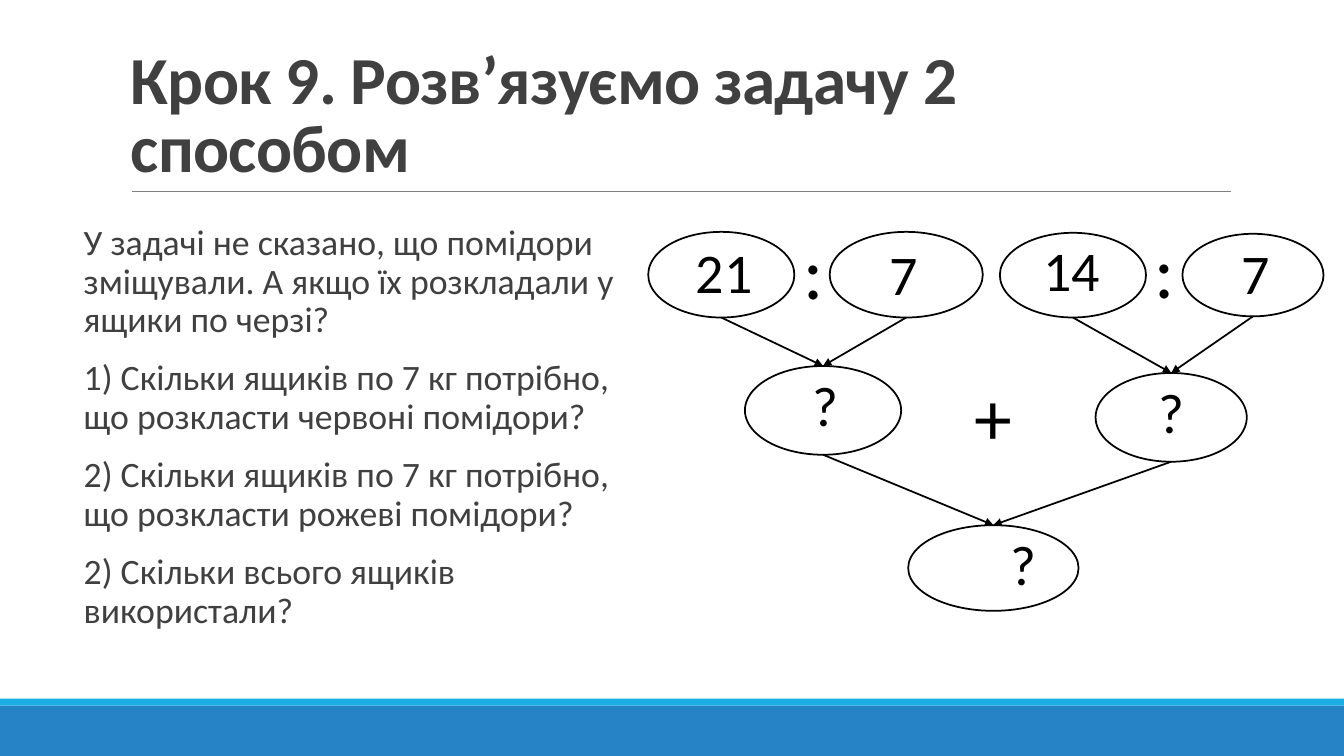
import pptx
import pptx.util
import pptx.dml.color
import pptx.enum.shapes
import pptx.enum.text
import pptx.oxml.ns
import pptx.oxml.xmlchemy

Pt = pptx.util.Pt
RGBColor = pptx.dml.color.RGBColor
SHAPES = pptx.enum.shapes.MSO_SHAPE
ALIGN = pptx.enum.text.PP_ALIGN
ANCHOR = pptx.enum.text.MSO_ANCHOR

BLACK = RGBColor(0, 0, 0)
WHITE = RGBColor(255, 255, 255)
TEXT_GRAY = RGBColor(0x40, 0x40, 0x40)
RULE_GRAY = RGBColor(0x80, 0x80, 0x80)
BLUE = RGBColor(0x26, 0x83, 0xC6)
CYAN = RGBColor(0x1C, 0xAD, 0xE4)

TITLE = "Крок 9. Розв’язуємо задачу 2 способом"
QUESTIONS = [
    "У задачі не сказано, що помідори зміщували. А якщо їх розкладали у ящики по черзі?",
    "1) Скільки ящиків по 7 кг потрібно, що розкласти червоні помідори?",
    "2) Скільки ящиків по 7 кг потрібно, що розкласти рожеві помідори?",
    "2) Скільки всього ящиків використали?",
]

# Name: ellipse left, top, width, height; label, its centre x, y and width
NODES = {
    "red": (0, 10.6, 104.4, 61.2, "21", 54.3, 39, 55.4),
    "red box": (129.6, 10.6, 109.4, 61.2, "7", 182.5, 40.5, 35),
    "pink": (251.2, 11.3, 104.4, 60.5, "14", 302.7, 37.6, 55.4),
    "pink box": (381.6, 12, 100.8, 59, "7", 433.8, 39.8, 35),
    "red count": (69.1, 106.4, 111.6, 63.4, "?", 126.7, 134.1, 33),
    "pink count": (319.6, 111.4, 108, 63.4, "?", 373.6, 139.1, 33),
    "total": (185.7, 220.1, 121.7, 61.2, "?", 267.8, 247.8, 33),
}
# Sign, centre x, y and width
OPERATORS = [(":", 118.4, 38.3, 29.5), (":", 369, 36.9, 29.5), ("+", 246.2, 142, 41.8)]
ARROWS = [
    ("red", "red count"), ("red box", "red count"),
    ("pink", "pink count"), ("pink box", "pink count"),
    ("red count", "total"), ("pink count", "total"),
]


def apply_format(target, values):
    for name, value in values.items():
        setattr(target, name, value)


def add_filled_shape(slide, kind, box, fill, line=None):
    shape = slide.shapes.add_shape(kind, *map(Pt, box))
    shape.shadow.inherit = False
    shape.fill.solid()
    shape.fill.fore_color.rgb = fill
    if line is None:
        shape.line.fill.background()
    else:
        shape.line.color.rgb = line
        shape.line.width = Pt(1.25)
    return shape


def add_line(slide, start, end, color, width):
    connector = slide.shapes.add_connector(
        pptx.enum.shapes.MSO_CONNECTOR.STRAIGHT, *map(Pt, start + end))
    connector.line.color.rgb = color
    connector.line.width = Pt(width)
    connector._element.spPr.append(pptx.oxml.xmlchemy.OxmlElement("a:effectLst"))
    return connector


def add_text(slide, box, texts, size, color, frame_format, paragraph_format, bold=False):
    frame = slide.shapes.add_textbox(*map(Pt, box)).text_frame
    apply_format(frame, frame_format)
    for index, text in enumerate(texts):
        paragraph = frame.add_paragraph() if index else frame.paragraphs[0]
        apply_format(paragraph, paragraph_format)
        run = paragraph.add_run()
        run.text = text
        apply_format(run.font, {"name": "Calibri", "size": Pt(size), "bold": bold})
        run.font.color.rgb = color
    return frame


def add_footer(slide, left, top, width, height):
    stripe = 5
    add_filled_shape(slide, SHAPES.RECTANGLE,
                     (left, top + stripe, width, height - stripe), BLUE)
    add_filled_shape(slide, SHAPES.RECTANGLE, (left, top, width, stripe), CYAN)


def add_title(slide, left, top, width, height):
    add_line(slide, (left + 8, top + height), (left + width + 0.7, top + height),
             RULE_GRAY, 0.5)
    frame = add_text(slide, (left, top, width, height), [TITLE], 48, TEXT_GRAY,
                     {"word_wrap": True, "vertical_anchor": ANCHOR.BOTTOM},
                     {"line_spacing": 0.85}, bold=True)
    # Slightly tightened letters
    frame.paragraphs[0].runs[0]._r.get_or_add_rPr().set("spc", "-50")


def add_questions(slide, left, top, width, height):
    add_text(slide, (left, top, width, height), QUESTIONS, 25.5, TEXT_GRAY,
             {"word_wrap": True, "margin_left": 0, "margin_right": 0},
             {"line_spacing": 0.9, "space_before": Pt(12), "space_after": Pt(2)})


def add_label(slide, text, center_x, center_y, width, size):
    height = size * 1.22 + 7.2
    add_text(slide, (center_x - width / 2, center_y - height / 2, width, height),
             [text], size, BLACK, {"word_wrap": False}, {"alignment": ALIGN.CENTER})


def add_solution_tree(slide, left, top):
    # Ellipses with their numbers
    ellipses = {}
    for name, (x, y, width, height, text, text_x, text_y, text_width) in NODES.items():
        ellipses[name] = add_filled_shape(
            slide, SHAPES.OVAL, (left + x, top + y, width, height), WHITE, BLACK)
        add_label(slide, text, left + text_x, top + text_y, text_width, 40)

    # Signs between the ellipses
    for text, x, y, width in OPERATORS:
        add_label(slide, text, left + x, top + y, width, 54)

    # Arrows from the bottom of one ellipse to the top of the next
    for source, target in ARROWS:
        x, y, width, height = NODES[source][:4]
        end_x, end_y, end_width = NODES[target][:3]
        arrow = add_line(slide, (left + x + width / 2, top + y + height),
                         (left + end_x + end_width / 2, top + end_y), BLACK, 1.25)
        arrow.end_connect(ellipses[target], 0)
        tail = pptx.oxml.xmlchemy.OxmlElement("a:tailEnd")
        tail.set("type", "triangle")
        arrow._element.spPr.find(pptx.oxml.ns.qn("a:ln")).append(tail)


def main():
    presentation = pptx.Presentation()
    apply_format(presentation, {"slide_width": Pt(960), "slide_height": Pt(540)})
    slide = presentation.slides.add_slide(presentation.slide_layouts[6])
    add_footer(slide, 0, 499, 960, 41)
    add_title(slide, 86.4, 22.3, 792, 114.5)
    add_questions(slide, 59.8, 157, 388.8, 338.4)
    add_solution_tree(slide, 463, 155)
    presentation.save("out.pptx")


if __name__ == "__main__":
    main()
